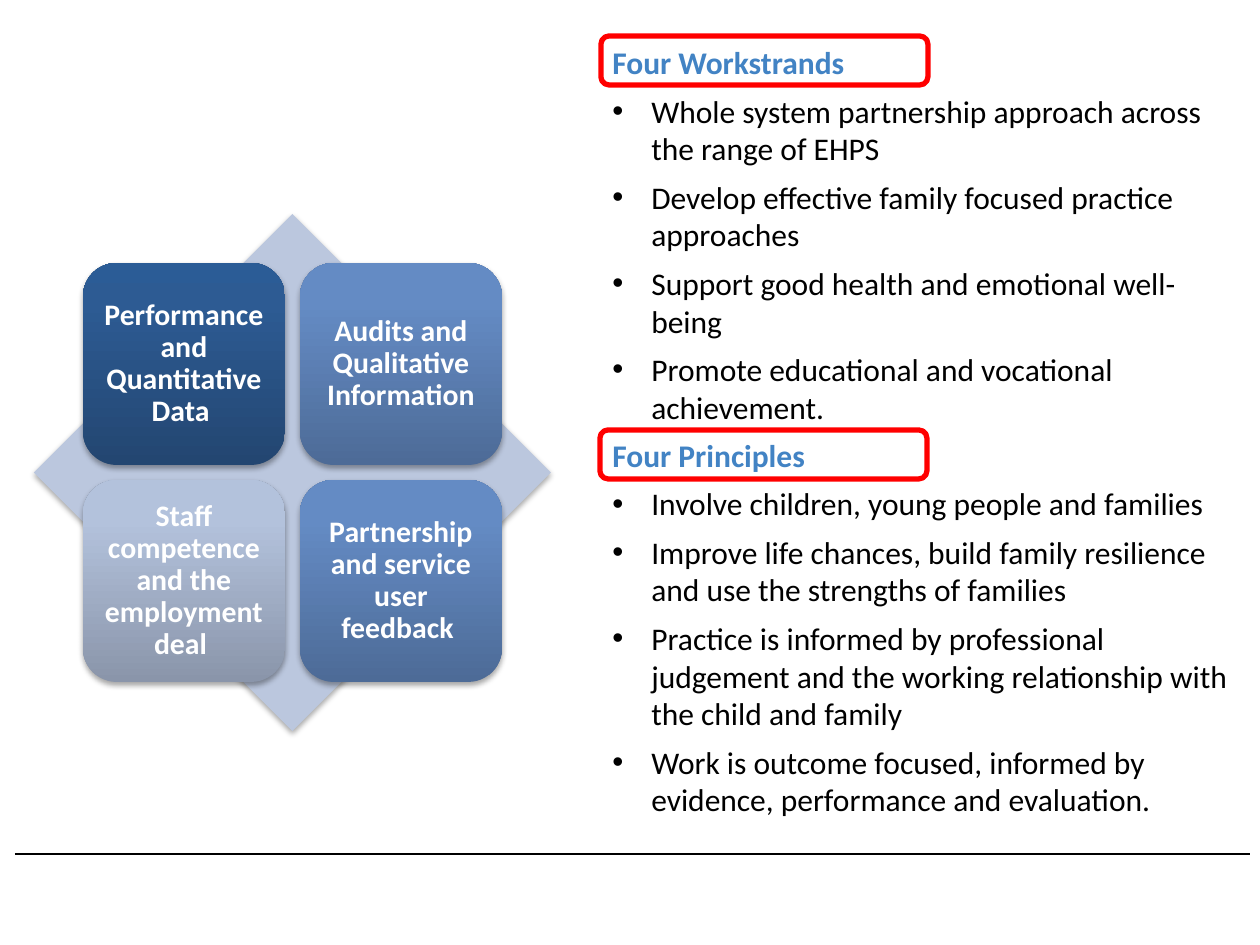
from lxml import etree
from pptx import Presentation
from pptx.dml.color import RGBColor
from pptx.enum.shapes import MSO_CONNECTOR, MSO_SHAPE
from pptx.enum.text import MSO_ANCHOR, MSO_AUTO_SIZE, PP_ALIGN
from pptx.oxml import parse_xml
from pptx.oxml.ns import nsdecls, qn
from pptx.util import Pt

ROUND, DIAMOND = MSO_SHAPE.ROUNDED_RECTANGLE, MSO_SHAPE.DIAMOND
STRAIGHT = MSO_CONNECTOR.STRAIGHT
LEFT, CENTER = PP_ALIGN.LEFT, PP_ALIGN.CENTER
BLACK = RGBColor(0x00, 0x00, 0x00)
WHITE = RGBColor(0xFF, 0xFF, 0xFF)
RED = RGBColor(0xFF, 0x00, 0x00)
HEADING_BLUE = RGBColor(0x42, 0x83, 0xC4)
PALE_BLUE = RGBColor(0xBB, 0xC7, 0xDE)
NAVY = [RGBColor(0x23, 0x46, 0x71), RGBColor(0x2D, 0x5B, 0x93), RGBColor(0x2B, 0x5C, 0x96)]
BLUE = [RGBColor(0x4D, 0x6B, 0x97), RGBColor(0x64, 0x8B, 0xC4), RGBColor(0x63, 0x8B, 0xC7)]
GREY = [RGBColor(0x8A, 0x95, 0xAA), RGBColor(0xB3, 0xC2, 0xDC), RGBColor(0xB4, 0xC3, 0xDE)]
PX = 914400 / 126

SECTIONS = [
    ("Four Workstrands", [
        "Whole system partnership approach across the range of EHPS",
        "Develop effective family focused practice approaches",
        "Support good health and emotional well-being",
        "Promote educational and vocational achievement.",
    ]),
    ("Four Principles", [
        "Involve children, young people and families",
        "Improve life chances, build family resilience and use the strengths of families",
        "Practice is informed by professional judgement and the working relationship with the child and family",
        "Work is outcome focused, informed by evidence, performance and evaluation.",
    ]),
]
TILES = [
    ("Performance and Quantitative Data ", NAVY),
    ("Audits and Qualitative Information", BLUE),
    ("Staff competence and the employment deal ", GREY),
    ("Partnership and service user feedback ", BLUE),
]


def add_text(tf, text, size=18, color=BLACK, bold=False, align=LEFT,
             spacing=None, after=0, bullet=False):
    p = tf.paragraphs[0] if not tf.paragraphs[0].runs else tf.add_paragraph()
    p.alignment = align
    p.line_spacing = spacing
    p.space_after = Pt(after)
    if bullet:
        pPr = p._p.get_or_add_pPr()
        pPr.set("marL", str(round(39 * PX)))
        pPr.set("indent", str(round(-39 * PX)))
        etree.SubElement(pPr, qn("a:buFont")).set("typeface", "Arial")
        etree.SubElement(pPr, qn("a:buChar")).set("char", "•")
    r = p.add_run()
    r.text = text
    r.font.name = "Calibri"
    r.font.size = Pt(size)
    r.font.bold = bold
    r.font.color.rgb = color


def add_shape(kind, *box, shadow=True):
    sp = s.shapes.add_shape(kind, *[round(n * PX) for n in box])
    sp.shadow.inherit = False
    if shadow:
        sp.line.fill.background()
        sp._element.spPr.find(qn("a:effectLst")).append(parse_xml(
            f'<a:outerShdw {nsdecls("a")} blurRad="40000" dist="23000" dir="5400000" rotWithShape="0">'
            '<a:srgbClr val="000000"><a:alpha val="35000"/></a:srgbClr></a:outerShdw>'))
    return sp


prs = Presentation()
prs.slide_width = round(1260 * PX)
prs.slide_height = round(945 * PX)
s = prs.slides.add_slide(prs.slide_layouts[6])

rule = s.shapes.add_connector(STRAIGHT, *[round(n * PX) for n in (15, 854, 1250, 854)])
rule.line.color.rgb = BLACK
rule.line.width = Pt(1)
etree.SubElement(rule._element.spPr, qn("a:effectLst"))

tb = s.shapes.add_textbox(*[round(n * PX) for n in (600, 37, 655, 941)])
tf = tb.text_frame
tf.word_wrap = True
tf.auto_size = MSO_AUTO_SIZE.SHAPE_TO_FIT_TEXT
for heading, points in SECTIONS:
    add_text(tf, heading, color=HEADING_BLUE, bold=True, after=6)
    for point in points:
        add_text(tf, point, after=6, bullet=True)

for x, y in ((601, 36), (600, 430)):
    frame = add_shape(ROUND, x, y, 327, 49, shadow=False)
    frame.fill.background()
    frame.line.color.rgb = RED
    frame.line.width = Pt(3)

diamond = add_shape(DIAMOND, 34, 214, 517, 517)
diamond.fill.solid()
diamond.fill.fore_color.rgb = PALE_BLUE

for i, (text, colors) in enumerate(TILES):
    row, col = divmod(i, 2)
    tile = add_shape(ROUND, 83 + 217 * col, 263 + 217 * row, 202, 202)
    stops = "".join(f'<a:gs pos="{pos}"><a:srgbClr val="{c}"/></a:gs>'
                    for pos, c in zip((0, 80000, 100000), colors))
    tile._element.spPr.find(qn("a:prstGeom")).addnext(parse_xml(
        f'<a:gradFill {nsdecls("a")} rotWithShape="1"><a:gsLst>{stops}</a:gsLst>'
        '<a:lin ang="16200000" scaled="0"/></a:gradFill>'))
    tf = tile.text_frame
    tf.word_wrap = True
    tf.vertical_anchor = MSO_ANCHOR.MIDDLE
    tf.margin_left = tf.margin_right = tf.margin_top = tf.margin_bottom = round(9 * PX)
    add_text(tf, text, size=17, color=WHITE, bold=True, align=CENTER, spacing=0.9)

prs.save("out.pptx")
